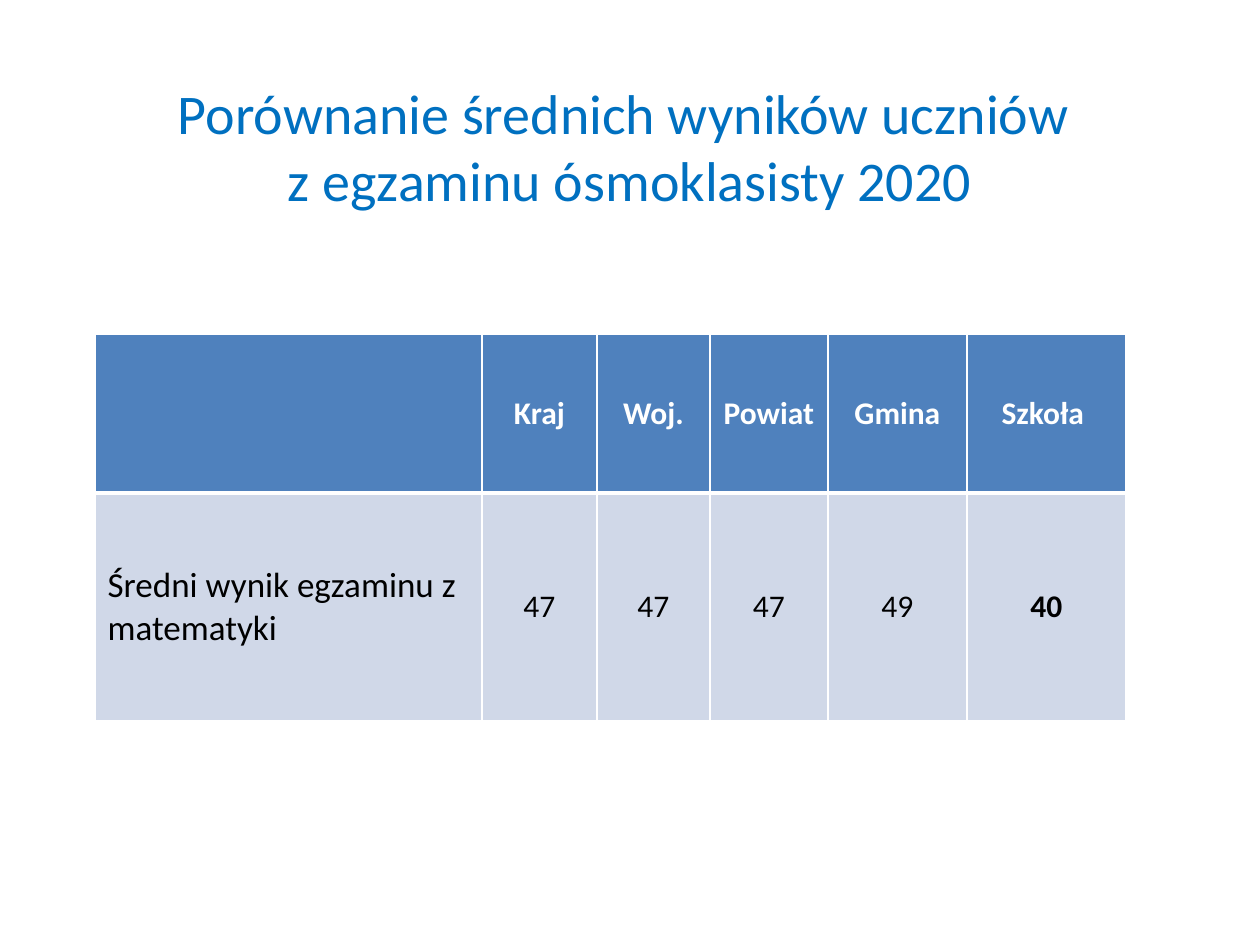
from lxml.etree import SubElement
from pptx import Presentation
from pptx.dml.color import RGBColor
from pptx.enum.text import MSO_ANCHOR, PP_ALIGN
from pptx.oxml.ns import qn
from pptx.util import Emu, Pt

EMU_PER_PX = 914400 / 126
WHITE = RGBColor(0xFF, 0xFF, 0xFF)
BLACK = RGBColor(0x00, 0x00, 0x00)
TITLE_BLUE = RGBColor(0x00, 0x70, 0xC0)
HEADER_BLUE = RGBColor(0x4F, 0x81, 0xBD)
BODY_BLUE = RGBColor(0xD0, 0xD8, 0xE8)

COLUMN_WIDTHS = [387, 115, 113, 118, 139, 159]
ROW_HEIGHTS = [159, 228]
HEADER = ["", "Kraj", "Woj.", "Powiat", "Gmina", "Szkoła "]
RESULTS = ["Średni wynik egzaminu z matematyki", "47", "47", "47", "49", "40"]


def px(length):
    return Emu(round(length * EMU_PER_PX))


def write_text(text_frame, text, *, size, color, font="Calibri", bold=False,
               align=PP_ALIGN.CENTER):
    """Fill a text frame; a vertical tab in the text is a line break."""
    paragraph = text_frame.paragraphs[0]
    paragraph.text = text
    paragraph.alignment = align
    for run in paragraph.runs:
        run.font.name = font
        run.font.size = Pt(size)
        run.font.bold = bold
        run.font.color.rgb = color


def set_borders(cell, color, **widths):
    """Draw cell borders; widths in points are keyed by side."""
    properties = cell._tc.get_or_add_tcPr()
    for index, side in enumerate(("L", "R", "T", "B")):
        line = SubElement(properties, qn(f"a:ln{side}"), w=str(Pt(widths[side])))
        fill = SubElement(line, qn("a:solidFill"))
        SubElement(fill, qn("a:srgbClr"), val=str(color))
        properties.remove(line)
        properties.insert(index, line)


class SlideBuilder:
    def __init__(self, presentation):
        self.slide = presentation.slides.add_slide(presentation.slide_layouts[5])

    def title(self, text, left, top, width, height):
        shape = self.slide.shapes.title
        shape.left, shape.top = px(left), px(top)
        shape.width, shape.height = px(width), px(height)
        shape.text_frame.vertical_anchor = MSO_ANCHOR.MIDDLE
        write_text(shape.text_frame, text, size=32, color=TITLE_BLUE)

    def table(self, rows, left, top):
        table = self.slide.shapes.add_table(
            len(rows), len(COLUMN_WIDTHS), px(left), px(top),
            px(sum(COLUMN_WIDTHS)), px(sum(ROW_HEIGHTS))).table
        for column, width in zip(table.columns, COLUMN_WIDTHS):
            column.width = px(width)
        for row, height in zip(table.rows, ROW_HEIGHTS):
            row.height = px(height)
        for row_index, texts in enumerate(rows):
            for column_index, text in enumerate(texts):
                self.cell(table.cell(row_index, column_index), text,
                          header=row_index == 0,
                          label=column_index == 0,
                          last=column_index == len(texts) - 1)

    def cell(self, cell, text, *, header, label, last):
        cell.vertical_anchor = MSO_ANCHOR.MIDDLE
        cell.fill.solid()
        cell.fill.fore_color.rgb = HEADER_BLUE if header else BODY_BLUE
        write_text(cell.text_frame, text,
                   size=20 if label else 18,
                   color=WHITE if header else BLACK,
                   bold=header or last,
                   align=PP_ALIGN.LEFT if label else PP_ALIGN.CENTER)
        # The rule between header and results is thicker
        set_borders(cell, WHITE, L=1, R=1,
                    T=1 if header else 3, B=3 if header else 1)


def main():
    presentation = Presentation()
    presentation.slide_width, presentation.slide_height = px(1260), px(945)
    builder = SlideBuilder(presentation)

    # Heading
    builder.title("Porównanie średnich wyników uczniów \vz egzaminu ósmoklasisty 2020",
                  63, 67, 1134, 158)
    # Exam results
    builder.table([HEADER, RESULTS], 95, 334)

    presentation.save("out.pptx")


if __name__ == "__main__":
    main()
